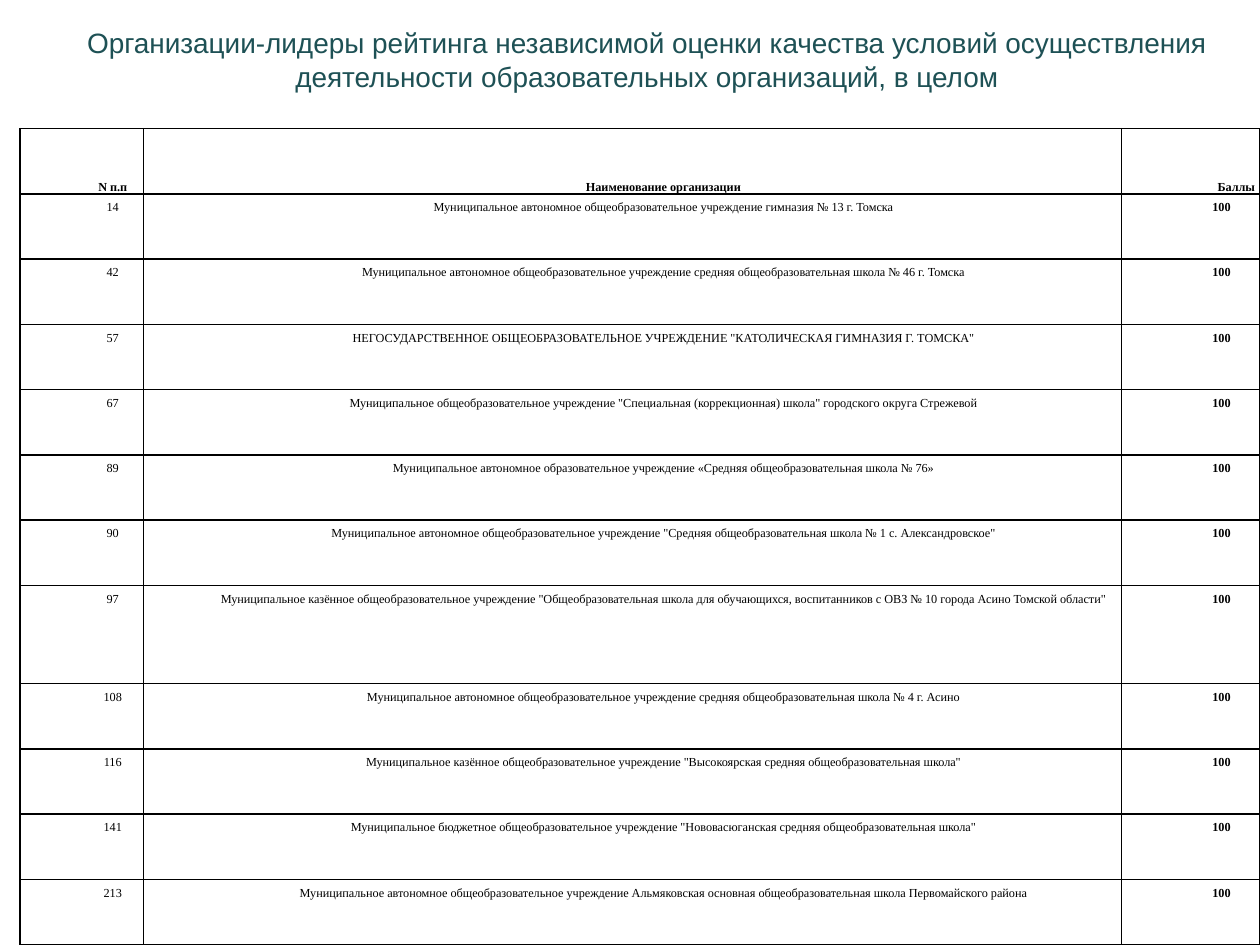
from dataclasses import dataclass

from lxml.etree import SubElement
from pptx import Presentation
from pptx.dml.color import RGBColor
from pptx.enum.text import MSO_ANCHOR, PP_ALIGN
from pptx.oxml.ns import qn
from pptx.slide import Slide
from pptx.table import _Cell
from pptx.util import Inches, Pt

COLORS = {"title": "1E5155", "text": "000000", "border": "000000"}
TITLE = (
    "Организации-лидеры рейтинга независимой оценки качества условий "
    "осуществления деятельности образовательных организаций, в целом"
)
HEADERS = ("N п.п", "Наименование организации", "Баллы")
COLUMN_WIDTHS = (0.98, 7.76, 1.1)
TABLE_HEIGHT = 6.48


@dataclass(frozen=True)
class Organization:
    """A leading organization with its number, score and relative row height."""

    number: int
    name: str
    score: int = 100
    height: float = 1


ORGANIZATIONS = (
    Organization(14, "Муниципальное автономное общеобразовательное учреждение гимназия № 13 г. Томска"),
    Organization(42, "Муниципальное автономное общеобразовательное учреждение средняя общеобразовательная школа № 46 г. Томска"),
    Organization(57, 'НЕГОСУДАРСТВЕННОЕ ОБЩЕОБРАЗОВАТЕЛЬНОЕ УЧРЕЖДЕНИЕ "КАТОЛИЧЕСКАЯ ГИМНАЗИЯ Г. ТОМСКА"'),
    Organization(67, 'Муниципальное общеобразовательное учреждение "Специальная (коррекционная) школа" городского округа Стрежевой'),
    Organization(89, "Муниципальное автономное образовательное учреждение «Средняя общеобразовательная школа № 76»"),
    Organization(90, 'Муниципальное автономное общеобразовательное учреждение "Средняя общеобразовательная школа № 1 с. Александровское"'),
    Organization(
        97,
        'Муниципальное казённое общеобразовательное учреждение "Общеобразовательная школа '
        'для обучающихся, воспитанников с ОВЗ № 10 города Асино Томской области"',
        height=1.5,
    ),
    Organization(108, "Муниципальное автономное общеобразовательное учреждение средняя общеобразовательная школа № 4 г. Асино"),
    Organization(116, 'Муниципальное казённое общеобразовательное учреждение "Высокоярская средняя общеобразовательная школа"'),
    Organization(141, 'Муниципальное бюджетное общеобразовательное учреждение "Нововасюганская средняя общеобразовательная школа"'),
    Organization(
        213,
        "Муниципальное автономное общеобразовательное учреждение Альмяковская основная "
        "общеобразовательная школа Первомайского района",
    ),
)


def draw_title(page: Slide) -> None:
    box = page.shapes.title
    box.left, box.top, box.width, box.height = Inches(0.5), Inches(0), Inches(9.27), Inches(0.94)
    frame = box.text_frame
    frame.text = TITLE
    frame.word_wrap = True
    frame.vertical_anchor = MSO_ANCHOR.MIDDLE
    paragraph = frame.paragraphs[0]
    paragraph.alignment = PP_ALIGN.CENTER
    span = paragraph.runs[0]
    span.font.name = "Arial"
    span.font.size = Pt(16)
    span.font.color.rgb = RGBColor.from_string(COLORS["title"])


def add_borders(cell: _Cell) -> None:
    properties = cell._tc.get_or_add_tcPr()
    for side in ("a:lnL", "a:lnR", "a:lnT", "a:lnB"):
        line = SubElement(properties, qn(side), w=str(Pt(1)))
        fill = SubElement(line, qn("a:solidFill"))
        SubElement(fill, qn("a:srgbClr"), val=COLORS["border"])


def fill_cell(cell: _Cell, text: str, bold: bool, alignment: PP_ALIGN, anchor: MSO_ANCHOR) -> None:
    add_borders(cell)
    cell.fill.background()
    cell.margin_left = cell.margin_right = Inches(0.04)
    cell.margin_top = cell.margin_bottom = 0
    cell.vertical_anchor = anchor
    cell.text_frame.text = text
    paragraph = cell.text_frame.paragraphs[0]
    paragraph.alignment = alignment
    paragraph.line_spacing = 1.5
    properties = paragraph._p.get_or_add_pPr()
    properties.set("marL", "0")
    properties.set("indent", str(Inches(0.49)))
    span = paragraph.runs[0]
    span.font.name = "Times New Roman"
    span.font.size = Pt(7)
    span.font.bold = bold
    span.font.color.rgb = RGBColor.from_string(COLORS["text"])


def draw_table(page: Slide) -> None:
    heights = [1] + [organization.height for organization in ORGANIZATIONS]
    table = page.shapes.add_table(
        len(heights), len(HEADERS), Inches(0.16), Inches(1.02),
        Inches(sum(COLUMN_WIDTHS)), Inches(TABLE_HEIGHT),
    ).table
    table.first_row = table.horz_banding = False
    for column, width in zip(table.columns, COLUMN_WIDTHS):
        column.width = Inches(width)
    for row, height in zip(table.rows, heights):
        row.height = Inches(TABLE_HEIGHT * height / sum(heights))

    last = len(HEADERS) - 1
    for column, header in enumerate(HEADERS):
        alignment = PP_ALIGN.RIGHT if column == last else PP_ALIGN.CENTER
        fill_cell(table.cell(0, column), header, True, alignment, MSO_ANCHOR.BOTTOM)
    for row, organization in enumerate(ORGANIZATIONS, start=1):
        values = (str(organization.number), organization.name, str(organization.score))
        for column, value in enumerate(values):
            fill_cell(table.cell(row, column), value, column == last, PP_ALIGN.CENTER, MSO_ANCHOR.TOP)


def main() -> None:
    deck = Presentation()
    deck.slide_width, deck.slide_height = Inches(10), Inches(7.5)
    page = deck.slides.add_slide(deck.slide_layouts.get_by_name("Title Only"))
    draw_title(page)
    draw_table(page)
    deck.save("out.pptx")


if __name__ == "__main__":
    main()
